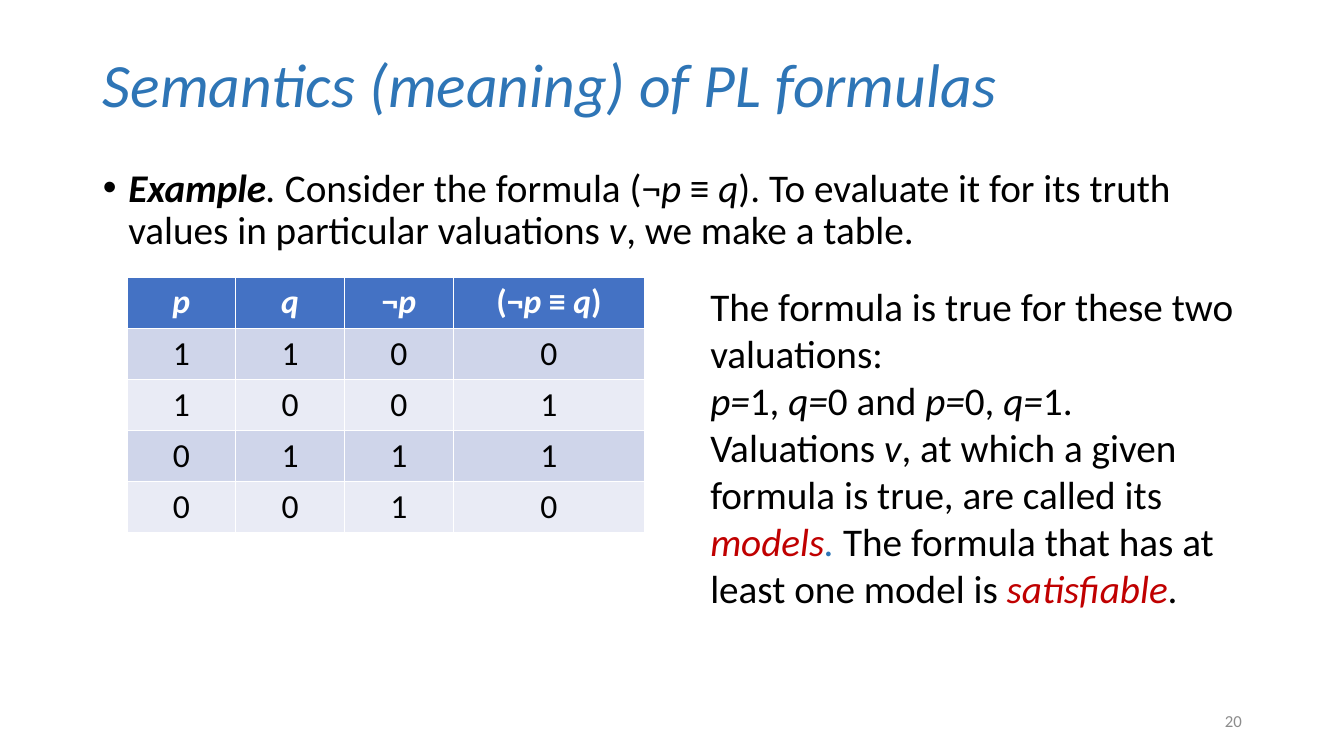
from pptx import Presentation
from pptx.dml.color import RGBColor
from pptx.enum.text import MSO_ANCHOR, MSO_AUTO_SIZE, PP_ALIGN
from pptx.util import Cm, Pt

LEFT, CENTER, RIGHT = PP_ALIGN.LEFT, PP_ALIGN.CENTER, PP_ALIGN.RIGHT
TOP, MIDDLE = MSO_ANCHOR.TOP, MSO_ANCHOR.MIDDLE

BLACK = RGBColor(0x00, 0x00, 0x00)
WHITE = RGBColor(0xFF, 0xFF, 0xFF)
GREY = RGBColor(0x8C, 0x8C, 0x8C)
TITLE_BLUE = RGBColor(0x2E, 0x75, 0xB6)
HEADER_BLUE = RGBColor(0x44, 0x72, 0xC4)
BANDS = RGBColor(0xCF, 0xD5, 0xEA), RGBColor(0xE9, 0xEB, 0xF5)
TERM_RED = RGBColor(0xC0, 0x00, 0x00)

ITALIC = {"italic": True}
TERM = {"italic": True, "color": TERM_RED}
LINE_BREAK = ("\n", {})

TITLE = [("Semantics (meaning) of PL formulas", ITALIC)]
FORMULA = [("(¬", {}), ("p ", ITALIC), ("≡ ", {}), ("q", ITALIC), (")", {})]
EXAMPLE = [
    ("Example", {"bold": True, "italic": True}), (". ", ITALIC),
    ("Consider the formula ", {}), *FORMULA,
    (". To evaluate it for its truth values in particular valuations ", {}),
    ("v", ITALIC), (", we make a table.", {}),
]
TRUE_VALUATIONS = [
    ("The formula is true for these two valuations:", {}), LINE_BREAK,
    ("p=", ITALIC), ("1, ", {}), ("q=", ITALIC), ("0 and ", {}),
    ("p=", ITALIC), ("0, ", {}), ("q=", ITALIC), ("1.", {}),
]
MODELS = [
    ("Valuations ", {}), ("v", ITALIC),
    (", at which a given formula is true, are called its ", {}),
    ("models", TERM), (". ", {"italic": True, "color": TITLE_BLUE}),
    ("The formula that has at least one model is ", {}),
    ("satisfiable", TERM), (".", {}),
]
TABLE_HEADER = [[("p", ITALIC)], [("q", ITALIC)], [("¬", {}), ("p", ITALIC)], FORMULA]
TRUTH_VALUES = ["1100", "1001", "0111", "0010"]


def write_runs(paragraph, runs, **base):
    for text, changes in runs:
        if text == "\n":
            paragraph.add_line_break()
            continue
        run = paragraph.add_run()
        run.text = text
        style = {"name": "Calibri", "bold": False, "italic": False, **base, **changes}
        run.font.color.rgb = style.pop("color")
        for attribute, value in style.items():
            setattr(run.font, attribute, value)


def place(shape, left, top, width, height):
    box = {"left": left, "top": top, "width": width, "height": height}
    for attribute, value in box.items():
        setattr(shape, attribute, Cm(value))


def write_text(shape, paragraphs, anchor=TOP, alignment=LEFT, spacing=None, **base):
    frame = shape.text_frame
    layout = {"word_wrap": True, "auto_size": MSO_AUTO_SIZE.NONE, "vertical_anchor": anchor}
    for attribute, value in layout.items():
        setattr(frame, attribute, value)
    for index, runs in enumerate(paragraphs):
        paragraph = frame.add_paragraph() if index else frame.paragraphs[0]
        paragraph.alignment = alignment
        paragraph.line_spacing = spacing
        write_runs(paragraph, runs, **base)


def add_text(slide, box, paragraphs, **layout):
    text = slide.shapes.add_textbox(*map(Cm, box))
    write_text(text, paragraphs, **layout)


def fill_cell(cell, runs, fill, **base):
    cell.fill.solid()
    cell.fill.fore_color.rgb = fill
    cell.vertical_anchor = MIDDLE
    paragraph = cell.text_frame.paragraphs[0]
    paragraph.alignment = CENTER
    write_runs(paragraph, runs, size=Pt(24), **base)


def add_truth_table(slide, left, top, widths, row_height):
    row_count = len(TRUTH_VALUES) + 1
    box = left, top, sum(widths), row_height * row_count
    table = slide.shapes.add_table(row_count, len(widths), *map(Cm, box)).table
    for column, width in zip(table.columns, widths):
        column.width = Cm(width)
    for column, formula in enumerate(TABLE_HEADER):
        fill_cell(table.cell(0, column), formula, HEADER_BLUE, color=WHITE, bold=True)
    for row, valuation in enumerate(TRUTH_VALUES):
        for column, value in enumerate(valuation):
            fill_cell(table.cell(row + 1, column), [(value, {})], BANDS[row % 2], color=BLACK)


def add_heading(slide):
    title = slide.shapes.title
    place(title, 2.34, 1.02, 29.21, 2.39)
    write_text(title, [TITLE], anchor=MIDDLE, spacing=0.9, size=Pt(44), color=TITLE_BLUE)


def add_example(slide):
    body = slide.placeholders[1]
    place(body, 2.34, 4.11, 29.21, 13.06)
    write_text(body, [EXAMPLE], spacing=0.9, size=Pt(28), color=BLACK)
    paragraph = body.text_frame.paragraphs[0]
    paragraph.space_before = Pt(10)
    indent = Cm(0.64)
    properties = paragraph._p.get_or_add_pPr()
    properties.set("marL", str(indent))
    properties.set("indent", str(-indent))


def main():
    presentation = Presentation()
    presentation.slide_width = Cm(33.87)
    presentation.slide_height = Cm(19.05)
    slide = presentation.slides.add_slide(presentation.slide_layouts[1])
    add_heading(slide)
    add_example(slide)
    add_text(slide, (23.93, 17.65, 7.62, 1.02), [[("20", {})]],
             anchor=MIDDLE, alignment=RIGHT, size=Pt(12), color=GREY)
    add_truth_table(slide, 3.2, 6.98, [2.74, 2.74, 2.74, 4.83], 1.27)
    add_text(slide, (17.65, 6.98, 13.87, 8.64), [TRUE_VALUATIONS, MODELS],
             size=Pt(28), color=BLACK)
    presentation.save("out.pptx")


if __name__ == "__main__":
    main()
